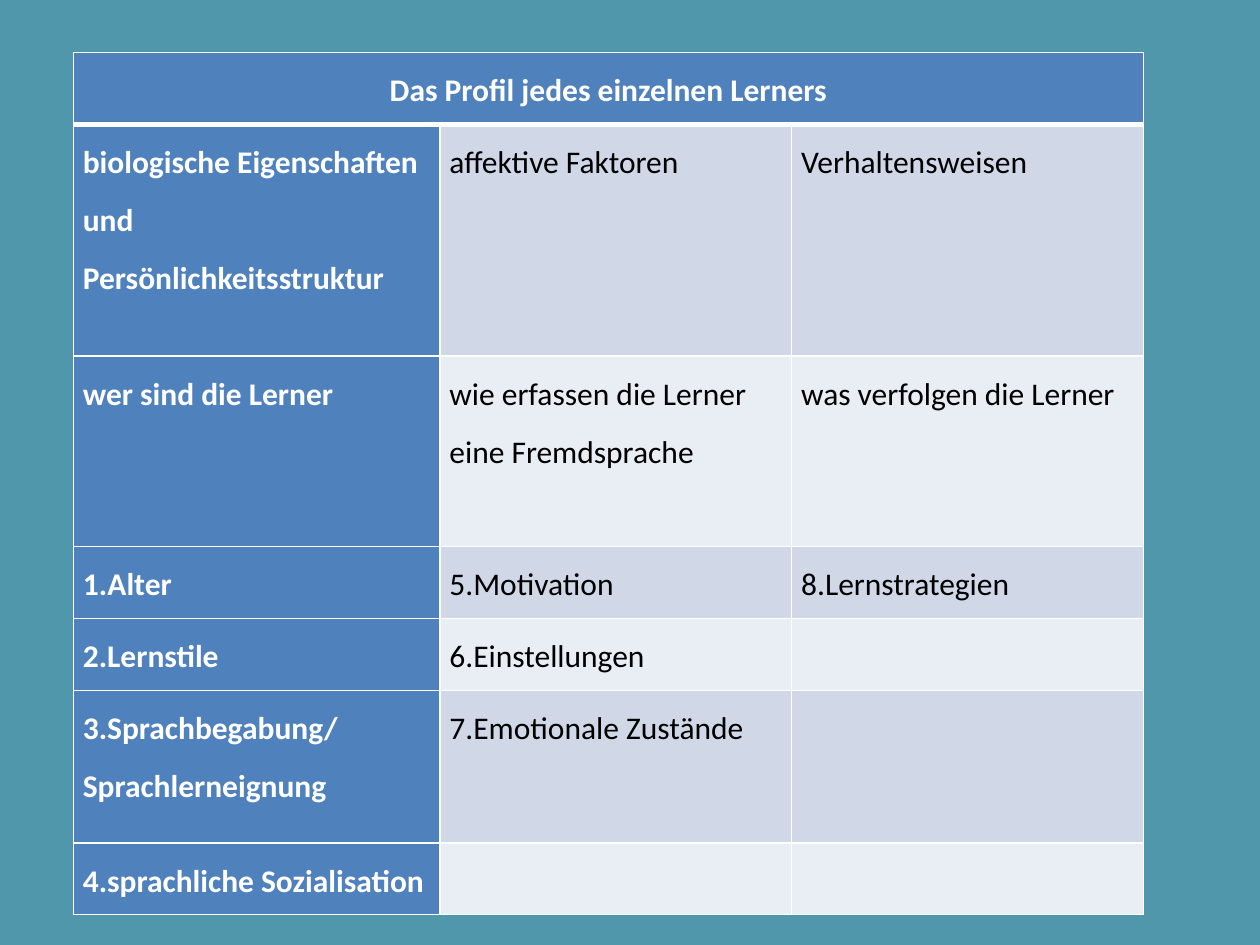
from lxml import etree
from pptx import Presentation
from pptx.dml.color import RGBColor
from pptx.enum.text import PP_ALIGN
from pptx.oxml.ns import qn
from pptx.util import Cm, Pt


def rgb(value):
    return RGBColor.from_string(value)


def set_borders(cell, widths):
    """Give a cell white borders; they must precede the fill in tcPr."""
    tc_pr = cell._tc.get_or_add_tcPr()
    for i, (side, width) in enumerate(widths.items()):
        ln = etree.Element(qn("a:ln" + side), w=str(Pt(width)))
        fill = etree.SubElement(ln, qn("a:solidFill"))
        etree.SubElement(fill, qn("a:srgbClr"), val="FFFFFF")
        tc_pr.insert(i, ln)


BLUE, BAND_DARK, BAND_LIGHT = "4F81BD", "D0D8E8", "E9EDF4"
COL_WIDTHS = [7.39, 7.09, 7.09]
ROW_HEIGHTS = [1.45, 4.67, 3.84, 1.45, 1.45, 3.07, 1.45]
ROWS = [
    ["Das Profil jedes einzelnen Lerners", "", ""],
    ["biologische Eigenschaften und Persönlichkeitsstruktur", "affektive Faktoren", "Verhaltensweisen"],
    ["wer sind die Lerner", "wie erfassen die Lerner eine Fremdsprache", "was verfolgen die Lerner"],
    ["1.Alter", "5.Motivation", "8.Lernstrategien"],
    ["2.Lernstile", "6.Einstellungen", ""],
    ["3.Sprachbegabung/ Sprachlerneignung", "7.Emotionale Zustände", ""],
    ["4.sprachliche Sozialisation", "", ""],
]

prs = Presentation()
prs.slide_width, prs.slide_height = Cm(25.4), Cm(19.05)
s = prs.slides.add_slide(prs.slide_layouts[6])

# Background
s.background.fill.solid()
s.background.fill.fore_color.rgb = rgb("5097AB")

# Table grid
tbl = s.shapes.add_table(len(ROWS), len(COL_WIDTHS), Cm(1.48), Cm(1.06),
                         Cm(sum(COL_WIDTHS)), Cm(sum(ROW_HEIGHTS))).table
tbl.first_row = tbl.horz_banding = False
for col, width in zip(tbl.columns, COL_WIDTHS):
    col.width = Cm(width)
for row, height in zip(tbl.rows, ROW_HEIGHTS):
    row.height = Cm(height)
tbl.cell(0, 0).merge(tbl.cell(0, 2))

# Cells: blue header row and first column, banded body
for i, texts in enumerate(ROWS):
    for j, text in enumerate(texts):
        cell = tbl.cell(i, j)
        header = i == 0 or j == 0
        cell.fill.solid()
        cell.fill.fore_color.rgb = rgb(BLUE if header else BAND_DARK if i % 2 else BAND_LIGHT)
        set_borders(cell, {"L": 1, "R": 1, "T": 3 if i == 1 else 1, "B": 3 if i == 0 else 1})
        cell.margin_left = cell.margin_right = Cm(0.19)
        cell.margin_top = cell.margin_bottom = 0
        if not text:
            continue
        p = cell.text_frame.paragraphs[0]
        p.alignment = PP_ALIGN.CENTER if i == 0 else PP_ALIGN.LEFT
        p.line_spacing = 1.5
        p.space_after = Pt(10)
        r = p.add_run()
        r.text = text
        r.font.name = "Calibri"
        r.font.size = Pt(18)
        r.font.bold = header
        r.font.color.rgb = rgb("FFFFFF" if header else "000000")

prs.save("out.pptx")
